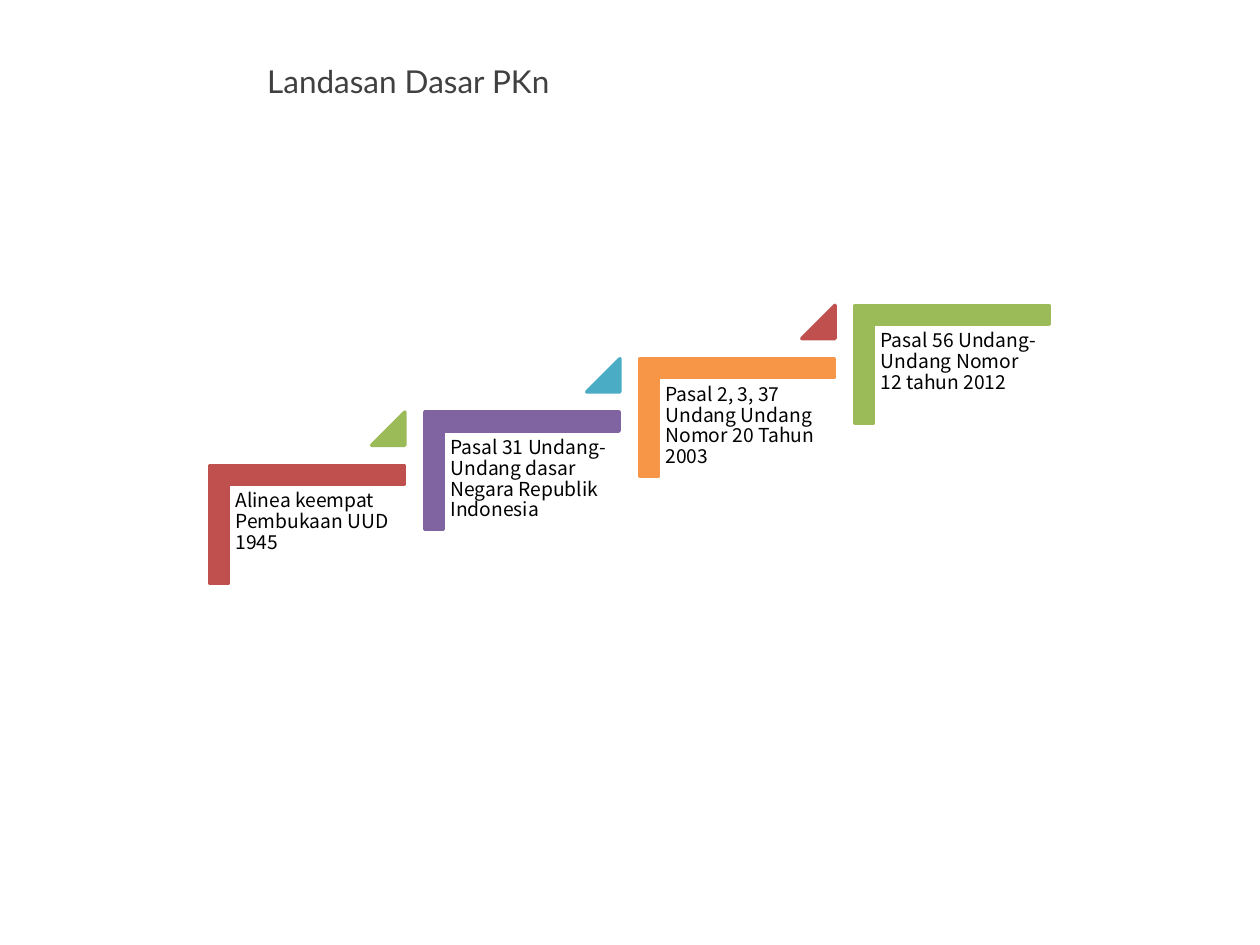
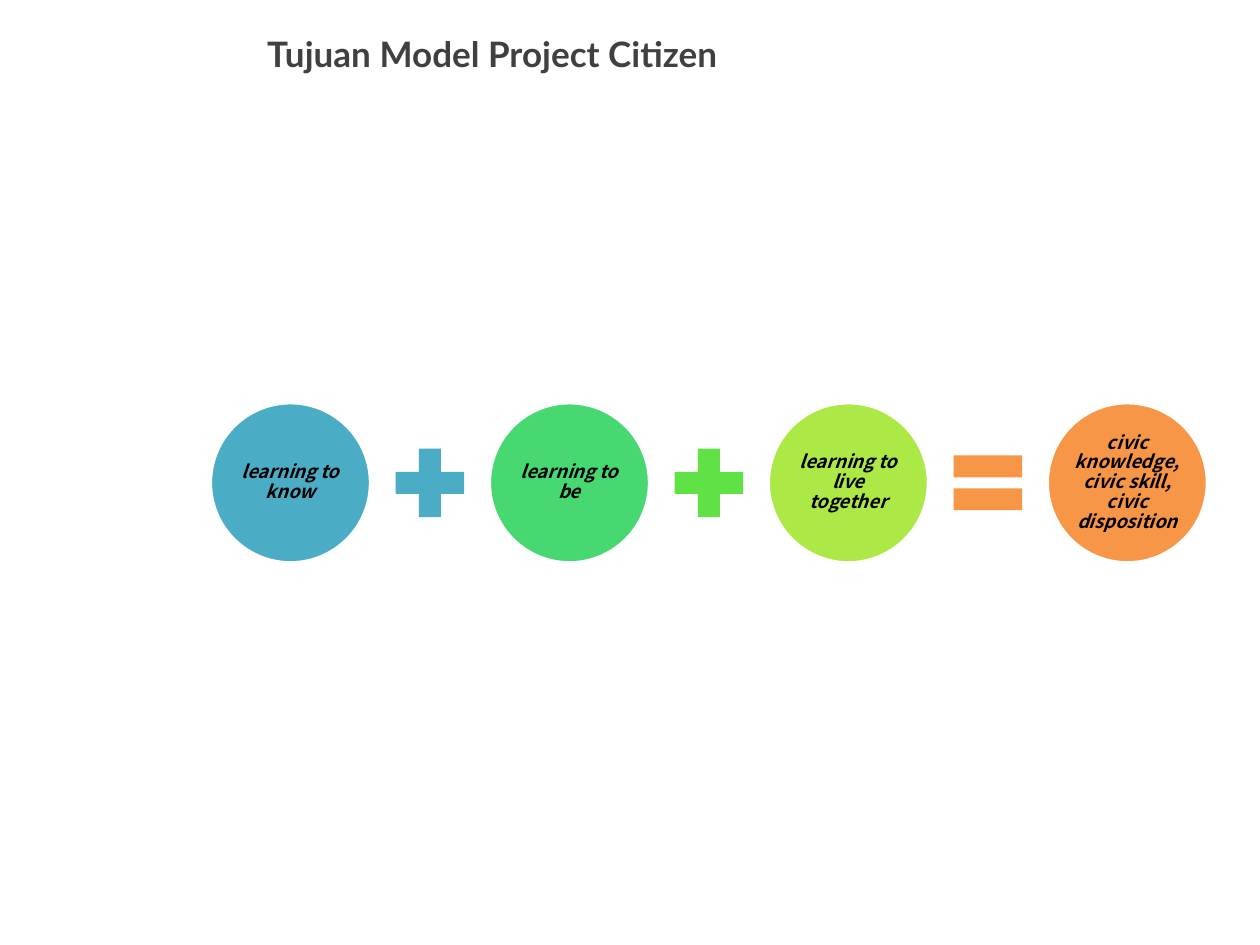
import pptx
import pptx.dml.color
import pptx.enum.shapes
import pptx.enum.text
import pptx.util

Pt = pptx.util.Pt
SHAPES = pptx.enum.shapes.MSO_SHAPE
ALIGN = pptx.enum.text.PP_ALIGN
ANCHOR = pptx.enum.text.MSO_ANCHOR

RED, GREEN, PURPLE, BLUE, ORANGE = "C0504D", "9BBB59", "8064A2", "4BACC6", "F79646"
MINT, LIME, GRASS = "47D872", "ACE946", "60E146"
WHITE, BLACK, GREY = "FFFFFF", "000000", "404040"
TITLE_FONT, BODY_FONT = "Lato", "Noto Sans CJK KR"

STEPS_TITLE = "Landasan Dasar PKn"
STEPS = [
    ("Alinea keempat Pembukaan UUD 1945", RED, GREEN),
    ("Pasal 31 Undang-Undang dasar Negara Republik Indonesia", PURPLE, BLUE),
    ("Pasal 2, 3, 37 Undang Undang Nomor 20 Tahun 2003", ORANGE, RED),
    ("Pasal 56 Undang-Undang Nomor 12 tahun 2012", GREEN, None),
]

GOALS_TITLE = "Tujuan Model Project Citizen"
GOALS = [
    ("learning to know", BLUE, SHAPES.MATH_PLUS, BLUE),
    ("learning to be", MINT, SHAPES.MATH_PLUS, GRASS),
    ("learning to live together", LIME, SHAPES.MATH_EQUAL, ORANGE),
    ("civic knowledge, civic skill, civic disposition", ORANGE, None, None),
]


def colour(value):
    return pptx.dml.color.RGBColor.from_string(value)


def add_figure(page, kind, left, top, width, height, fill, line=None):
    figure = page.shapes.add_shape(kind, Pt(left), Pt(top), Pt(width), Pt(height))
    figure.shadow.inherit = False
    figure.fill.solid()
    figure.fill.fore_color.rgb = colour(fill)
    if line:
        figure.line.color.rgb = colour(line)
        figure.line.width = Pt(2)
    else:
        figure.line.fill.background()
    return figure


def add_text(page, text, left, top, width, height, insets, size, font=BODY_FONT,
             ink=BLACK, bold=False, italic=False, align=ALIGN.LEFT,
             anchor=ANCHOR.TOP, spacing=0.9):
    box = page.shapes.add_textbox(Pt(left), Pt(top), Pt(width), Pt(height))
    frame = box.text_frame
    frame.word_wrap = True
    frame.vertical_anchor = anchor
    (frame.margin_left, frame.margin_top,
     frame.margin_right, frame.margin_bottom) = [Pt(inset) for inset in insets]
    para = frame.paragraphs[0]
    para.alignment = align
    para.line_spacing = spacing
    span = para.add_run()
    span.text = text
    span.font.name = font
    span.font.size = Pt(size)
    span.font.bold = bold
    span.font.italic = italic
    span.font.color.rgb = colour(ink)


def add_page(deck, title, top, size, bold=False):
    page = deck.slides.add_slide(deck.slide_layouts[6])
    add_text(page, title, 121.7, top, 563, 440, (31, 3.6, 7.2, 3.6), size,
             TITLE_FONT, GREY, bold, spacing=1)
    return page


def build_steps(deck):
    page = add_page(deck, STEPS_TITLE, 31.7, 18)
    for index, (text, fill, marker) in enumerate(STEPS):
        left, top = 141.8 + 122.9 * index, 244.1 - 30.5 * index
        corner = add_figure(page, SHAPES.CORNER, left, top, 67, 111, fill, fill)
        corner.adjustments[0] = corner.adjustments[1] = 0.16
        corner.rotation = 90
        add_text(page, text, left - 10.9, top + 33.1, 100.1, 87.8, (3.6,) * 4, 11)
        if marker:
            triangle = add_figure(page, SHAPES.ISOSCELES_TRIANGLE, left + 70.6,
                                  top - 8.6, 19, 19, marker, marker)
            triangle.adjustments[0] = 1


def build_goals(deck):
    page = add_page(deck, GOALS_TITLE, 15.1, 20, True)
    diameter, sign_size, gap, middle = 91.6, 53.2, 7.3, 275.9
    pitch = diameter + sign_size + 2 * gap
    label_size = 64.8
    inset = (diameter - label_size) / 2
    for index, (text, fill, sign, sign_fill) in enumerate(GOALS):
        left, top = 120.2 + pitch * index, middle - diameter / 2
        add_figure(page, SHAPES.OVAL, left, top, diameter, diameter, fill, WHITE)
        add_text(page, text, left + inset, top + inset, label_size, label_size,
                 (1.2,) * 4, 10.5, bold=True, italic=True,
                 align=ALIGN.CENTER, anchor=ANCHOR.MIDDLE)
        if sign:
            add_figure(page, sign, left + diameter + gap, middle - sign_size / 2,
                       sign_size, sign_size, sign_fill)


def main():
    deck = pptx.Presentation()
    deck.slide_width, deck.slide_height = Pt(720), Pt(540)
    build_steps(deck)
    build_goals(deck)
    deck.save("out.pptx")


if __name__ == "__main__":
    main()
